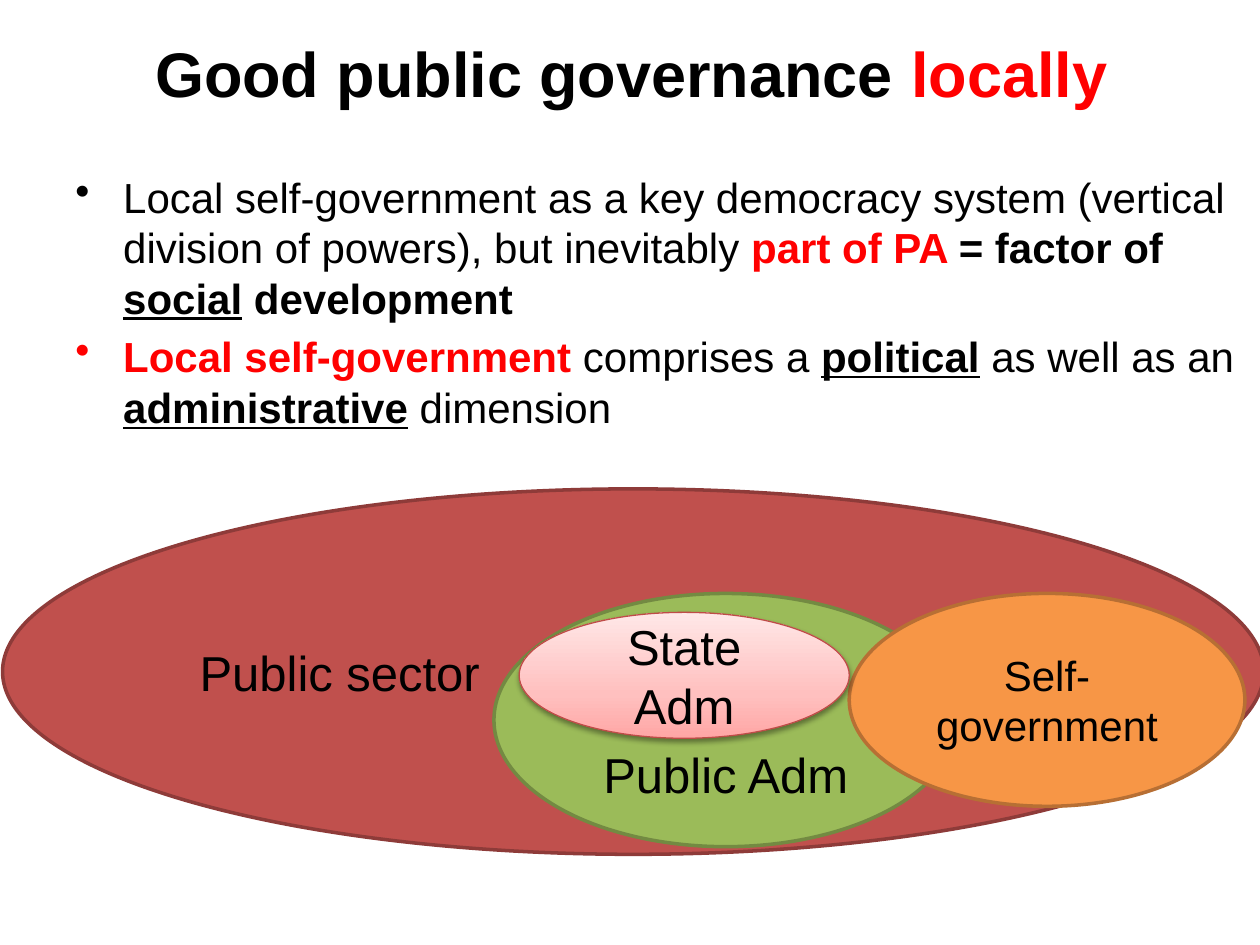
from dataclasses import dataclass

from pptx import Presentation
from pptx.dml.color import RGBColor
from pptx.enum.shapes import MSO_SHAPE
from pptx.enum.text import MSO_ANCHOR, PP_ALIGN
from pptx.oxml import parse_xml
from pptx.oxml.ns import nsdecls, qn
from pptx.shapes.autoshape import Shape
from pptx.slide import Slide
from pptx.text.text import Font, _Paragraph
from pptx.util import Inches, Pt

WIDTH, HEIGHT = Inches(10), Inches(7.5)
FONT = "Arial"
COLORS = {
    "text": "000000", "accent": "FF0000",
    "sector": "C0504D", "sector_edge": "8E3B39",
    "administration": "9BBB59", "administration_edge": "738A42",
    "self_government": "F79646", "self_government_edge": "B76F34",
    "state": "FFC0BF", "state_edge": "BF4C48",
}
STATE_GRADIENT = ((0, "FFA6A5"), (35, "FFC0BF"), (100, "FFE7E7"))


@dataclass(frozen=True)
class Span:
    text: str
    color: str = "text"
    bold: bool = False
    underline: bool = False


@dataclass(frozen=True)
class Sphere:
    """An ellipse placed by percentages of the slide's width and height."""
    label: str
    color: str
    left: float
    top: float
    width: float
    height: float
    size: int = 28
    align: PP_ALIGN = PP_ALIGN.CENTER
    anchor: MSO_ANCHOR = MSO_ANCHOR.MIDDLE
    edge_width: float = 2


TITLE = (Span("Good public governance ", bold=True), Span("locally", "accent", True))
POINTS = (
    (
        Span("Local self-government as a key democracy system (vertical division of powers), but inevitably "),
        Span("part of PA ", "accent", True),
        Span("= factor of ", bold=True),
        Span("social", bold=True, underline=True),
        Span(" development", bold=True),
    ),
    (
        Span("Local self-government ", "accent", True),
        Span("comprises a "),
        Span("political", bold=True, underline=True),
        Span(" as well as an "),
        Span("administrative", bold=True, underline=True),
        Span(" dimension"),
    ),
)
SPHERES = (
    Sphere("Public sector", "sector", 0.2, 51.73, 100.1, 38.67, align=PP_ALIGN.LEFT),
    Sphere("Public Adm", "administration", 39.2, 62.8, 36.8, 26.8, anchor=MSO_ANCHOR.BOTTOM),
    Sphere("Self-government", "self_government", 67.4, 62.8, 31.4, 22.53, size=24),
)
STATE = Sphere("State Adm", "state", 41.2, 64.8, 26.2, 13.33, edge_width=0.75)


def rgb(name: str) -> RGBColor:
    return RGBColor.from_string(COLORS[name])


def set_font(font: Font, size: int) -> None:
    font.name, font.size = FONT, Pt(size)


def write_spans(paragraph: _Paragraph, spans: tuple[Span, ...], size: int) -> None:
    set_font(paragraph.font, size)
    for span in spans:
        run = paragraph.add_run()
        run.text = span.text
        run.font.color.rgb = rgb(span.color)
        run.font.bold = span.bold
        run.font.underline = span.underline


def write_title(slide: Slide) -> None:
    title = slide.shapes.title
    title.left, title.top, title.width, title.height = map(Inches, (0.51, 0.17, 9, 1))
    frame = title.text_frame
    frame.vertical_anchor = MSO_ANCHOR.TOP
    frame.margin_top = Inches(0.1)
    heading = frame.paragraphs[0]
    heading.alignment = PP_ALIGN.CENTER
    write_spans(heading, TITLE, 36)


def write_points(slide: Slide) -> None:
    frame = slide.shapes.add_textbox(*map(Inches, (0.5, 1.31, 9.5, 2.3))).text_frame
    frame.word_wrap = True
    for index, spans in enumerate(POINTS):
        point = frame.add_paragraph() if index else frame.paragraphs[0]
        properties = point._p.get_or_add_pPr()
        properties.set("marL", str(Inches(0.38)))
        properties.set("indent", str(-Inches(0.38)))
        properties.append(parse_xml(f'<a:buChar {nsdecls("a")} char="•"/>'))
        if index:
            point.space_before = Pt(4.8)
        write_spans(point, spans, 24)


def draw_sphere(slide: Slide, sphere: Sphere) -> Shape:
    ellipse = slide.shapes.add_shape(
        MSO_SHAPE.OVAL,
        int(WIDTH * sphere.left / 100), int(HEIGHT * sphere.top / 100),
        int(WIDTH * sphere.width / 100), int(HEIGHT * sphere.height / 100),
    )
    ellipse.shadow.inherit = False
    ellipse.fill.solid()
    ellipse.fill.fore_color.rgb = rgb(sphere.color)
    ellipse.line.color.rgb = rgb(f"{sphere.color}_edge")
    ellipse.line.width = Pt(sphere.edge_width)
    frame = ellipse.text_frame
    frame.word_wrap = True
    frame.vertical_anchor = sphere.anchor
    label = frame.paragraphs[0]
    label.text = sphere.label
    label.alignment = sphere.align
    set_font(label.font, sphere.size)
    label.font.color.rgb = rgb("text")
    return ellipse


def add_glow(ellipse: Shape) -> None:
    """Give the ellipse an upward gradient and a soft shadow below."""
    ellipse.fill.gradient()
    ellipse.fill.gradient_angle = 90
    properties = ellipse._element.spPr
    stops = properties.find(qn("a:gradFill")).find(qn("a:gsLst"))
    for stop in list(stops):
        stops.remove(stop)
    for position, color in STATE_GRADIENT:
        stops.append(parse_xml(
            f'<a:gs {nsdecls("a")} pos="{position * 1000}"><a:srgbClr val="{color}"/></a:gs>'
        ))
    properties.find(qn("a:effectLst")).append(parse_xml(
        f'<a:outerShdw {nsdecls("a")} blurRad="{Pt(3.1)}" dist="{Pt(1.6)}" dir="5400000" rotWithShape="0">'
        f'<a:srgbClr val="{COLORS["text"]}"><a:alpha val="38000"/></a:srgbClr></a:outerShdw>'
    ))


def main() -> None:
    presentation = Presentation()
    presentation.slide_width, presentation.slide_height = WIDTH, HEIGHT
    slide = presentation.slides.add_slide(presentation.slide_layouts[5])
    write_title(slide)
    write_points(slide)
    for sphere in SPHERES:
        draw_sphere(slide, sphere)
    add_glow(draw_sphere(slide, STATE))
    presentation.save("out.pptx")


if __name__ == "__main__":
    main()
